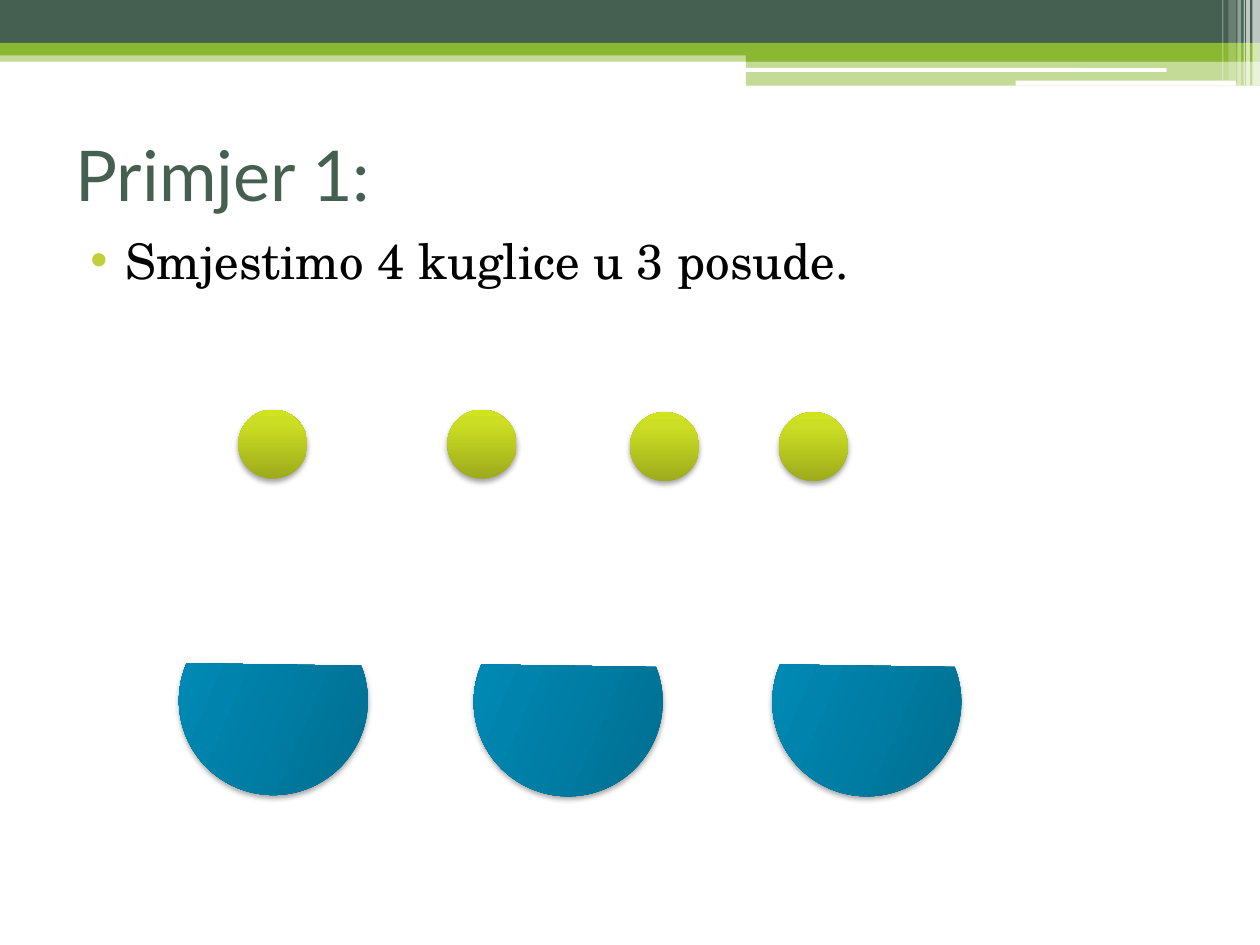
from lxml import etree
from pptx import Presentation
from pptx.dml.color import RGBColor
from pptx.enum.shapes import MSO_SHAPE
from pptx.enum.text import MSO_ANCHOR, PP_ALIGN
from pptx.oxml.ns import qn
from pptx.util import Inches, Pt

RECT, ROUNDED = MSO_SHAPE.RECTANGLE, MSO_SHAPE.ROUNDED_RECTANGLE
BALL, BOWL = MSO_SHAPE.OVAL, MSO_SHAPE.CHORD
MIDDLE, LEFT = MSO_ANCHOR.MIDDLE, PP_ALIGN.LEFT

COLORS = {
    "dark": "455F51",
    "green": "8AB833",
    "white": "FFFFFF",
    "black": "000000",
    "bullet": "C0CF3A",
}
BALL_STOPS = ((0, "9DAB1B"), (80, "CBDE23"), (100, "CFE31F"))
BOWL_STOPS = ((0, "006A8B"), (80, "0089B4"), (100, "008AB5"))

BALL_SIZE, BOWL_SIZE = 0.55, 1.5
BALLS = ((1.89, 3.25), (3.55, 3.25), (5, 3.27), (6.18, 3.27))
BOWLS = ((1.42, 4.81), (3.76, 4.82), (6.13, 4.82))

# left, top, width, height, colour, opacity in percent
BANDS = (
    (0, 0.4, 10, 0.09, "green", 50),
    (0, 0, 10, 0.34, "dark", 100),
    (0, 0.34, 10, 0.1, "green", 100),
    (5.92, 0.39, 4.08, 0.1, "green", 100),
    (5.92, 0.48, 4.08, 0.2, "green", 50),
)
WHITE_LINES = ((5.91, 0.54, 3.35, 0.03), (8.06, 0.64, 1.75, 0.04))
# left, width, height, opacity in percent
STRIPES = (
    (9.94, 0.06, 0.68, 65),
    (9.89, 0.03, 0.68, 65),
    (9.87, 0.01, 0.68, 60),
    (9.82, 0.03, 0.68, 40),
    (9.75, 0.06, 0.64, 20),
    (9.7, 0.01, 0.64, 30),
)


def add_xml(parent, tag, **attributes):
    return etree.SubElement(parent, qn(tag), attributes)


def add_color(parent, color, opacity=100):
    node = add_xml(parent, "a:srgbClr", val=color)
    if opacity < 100:
        add_xml(node, "a:alpha", val=str(opacity * 1000))


def add_plain(slide, kind, left, top, width, height):
    """Add a shape without outline or shadow."""
    shape = slide.shapes.add_shape(
        kind, Inches(left), Inches(top), Inches(width), Inches(height))
    shape.line.fill.background()
    shape.shadow.inherit = False
    return shape


def add_band(slide, kind, left, top, width, height, color, opacity=100):
    band = add_plain(slide, kind, left, top, width, height)
    band.fill.solid()
    band.fill.fore_color.rgb = RGBColor.from_string(COLORS[color])
    if opacity < 100:
        node = band.fill._xPr.find(".//" + qn("a:srgbClr"))
        add_xml(node, "a:alpha", val=str(opacity * 1000))


def add_glossy(slide, kind, position, size, stops, rotation=0):
    """Add a shape with an upward gradient and a soft shadow below."""
    shape = add_plain(slide, kind, *position, size, size)
    shape.rotation = rotation
    properties = shape._element.spPr
    gradient = etree.Element(qn("a:gradFill"), rotWithShape="1")
    stop_list = add_xml(gradient, "a:gsLst")
    for share, color in stops:
        add_color(add_xml(stop_list, "a:gs", pos=str(share * 1000)), color)
    add_xml(gradient, "a:lin", ang=str(270 * 60000), scaled="0")
    properties.find(qn("a:prstGeom")).addnext(gradient)
    shadow = add_xml(
        properties.find(qn("a:effectLst")), "a:outerShdw",
        blurRad=str(Pt(3.1)), dist=str(Pt(1.8)), dir=str(90 * 60000),
        rotWithShape="0")
    add_color(shadow, COLORS["black"], 35)


def add_run(paragraph, text, size, font, color):
    run = paragraph.add_run()
    run.text = text
    run.font.size = Pt(size)
    run.font.name = font
    run.font.color.rgb = RGBColor.from_string(COLORS[color])


def add_bullet(paragraph, margin, hanging):
    properties = paragraph._p.get_or_add_pPr()
    properties.set("marL", str(Inches(margin)))
    properties.set("indent", str(-Inches(hanging)))
    add_color(add_xml(properties, "a:buClr"), COLORS["bullet"])
    add_xml(properties, "a:buFont", typeface="Arial")
    add_xml(properties, "a:buChar", char="•")


def add_header(slide):
    for *box, color, opacity in BANDS:
        add_band(slide, RECT, *box, color, opacity)
    for box in WHITE_LINES:
        add_band(slide, ROUNDED, *box, "white")
    for left, width, height, opacity in STRIPES:
        add_band(slide, RECT, left, 0, width, height, "white", opacity)


def set_title(slide, text):
    title = slide.shapes.title
    title.left, title.top = Inches(0.5), Inches(0.79)
    title.width, title.height = Inches(9), Inches(1.17)
    title.text_frame.vertical_anchor = MIDDLE
    paragraph = title.text_frame.paragraphs[0]
    paragraph.alignment = LEFT
    add_run(paragraph, text, 40, "Lato", "dark")


def add_task(slide, text):
    task = slide.shapes.add_textbox(
        Inches(0.5), Inches(1.78), Inches(9), Inches(4.49))
    task.text_frame.word_wrap = True
    paragraph = task.text_frame.paragraphs[0]
    paragraph.space_before = Pt(3)
    add_bullet(paragraph, 0.4, 0.28)
    add_run(paragraph, text, 28, "TeX Gyre Schola", "black")


def main():
    deck = Presentation()
    deck.slide_width, deck.slide_height = Inches(10), Inches(7.5)
    slide = deck.slides.add_slide(deck.slide_layouts[5])
    add_header(slide)
    set_title(slide, "Primjer 1:")
    add_task(slide, "Smjestimo 4 kuglice u 3 posude.")
    for position in BOWLS:
        add_glossy(slide, BOWL, position, BOWL_SIZE, BOWL_STOPS, 293.3)
    for position in BALLS:
        add_glossy(slide, BALL, position, BALL_SIZE, BALL_STOPS)
    deck.save("out.pptx")


if __name__ == "__main__":
    main()
